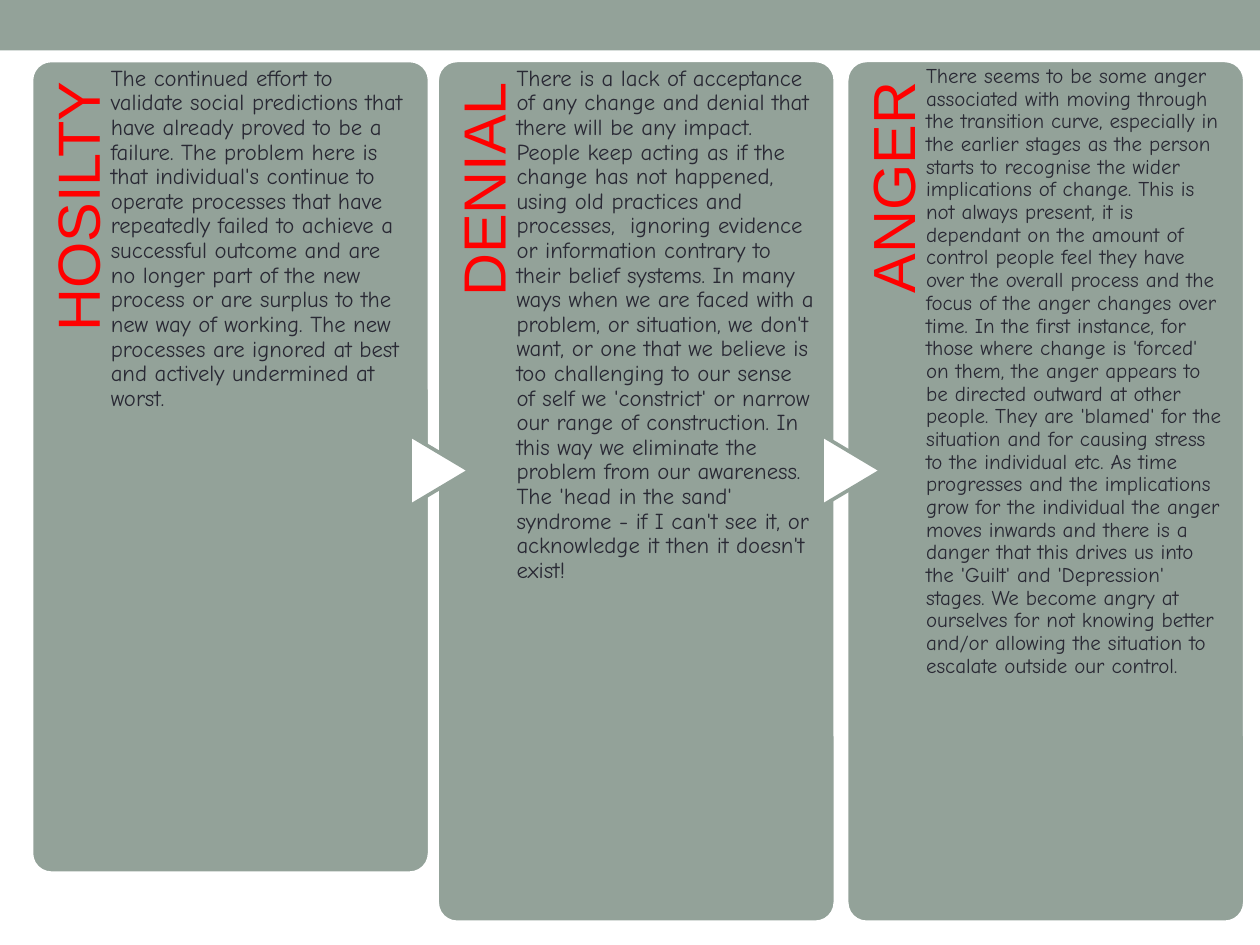
from dataclasses import dataclass

from pptx import Presentation
from pptx.dml.color import RGBColor as RGB
from pptx.enum.shapes import MSO_SHAPE as Kind
from pptx.enum.text import MSO_ANCHOR as Anchor, PP_ALIGN as Align
from pptx.util import Inches, Pt


@dataclass(frozen=True)
class Theme:
    sage: RGB = RGB(0x93, 0xA2, 0x99)
    white: RGB = RGB(0xFF, 0xFF, 0xFF)
    red: RGB = RGB(0xFF, 0x00, 0x00)
    ink: RGB = RGB(0x29, 0x29, 0x34)
    head: str = "Arial"
    body: str = "Comic Neue"
    big: float = 34
    mid: float = 13
    small: float = 12
    edge: float = 2.08


class Deck:
    def __init__(self, slide, theme):
        self.slide = slide
        self.theme = theme

    def shape(self, kind, x, y, w, h, fill, line=None):
        item = self.slide.shapes.add_shape(
            kind, Inches(x), Inches(y), Inches(w), Inches(h))
        item.shadow.inherit = False
        item.fill.solid()
        item.fill.fore_color.rgb = fill
        if line is None:
            item.line.fill.background()
        else:
            item.line.color.rgb = line
            item.line.width = Pt(self.theme.edge)
        return item

    def text(self, words, x, y, w, h, font, size, color, top, right=0):
        box = self.slide.shapes.add_textbox(
            Inches(x), Inches(y), Inches(w), Inches(h))
        frame = box.text_frame
        frame.word_wrap = True
        frame.vertical_anchor = Anchor.TOP
        frame.margin_left = frame.margin_bottom = 0
        frame.margin_top, frame.margin_right = Inches(top), Inches(right)
        frame.text = words
        para = frame.paragraphs[0]
        para.line_spacing = 0.9
        style = para.runs[0].font
        style.name, style.size = font, Pt(size)
        style.color.rgb = color
        return box

    def card(self, x, y, w, h):
        item = self.shape(Kind.ROUNDED_RECTANGLE, x, y, w, h,
                          self.theme.sage, self.theme.white)
        item.adjustments[0] = 0.05

    def title(self, words, x, y, h):
        # Rotated about its centre, so its length runs up the card
        span, deep = 0.82 * h, 0.63
        box = self.text(words, x + 0.32 - span / 2, y + (span - deep) / 2,
                        span, deep, self.theme.head, self.theme.big,
                        self.theme.red, 0.13, 0.17)
        box.rotation = 270
        box.text_frame.paragraphs[0].alignment = Align.RIGHT

    def arrow(self, x):
        item = self.shape(Kind.FLOWCHART_EXTRACT, x, 3.5, 0.56, 0.47,
                          self.theme.white, self.theme.sage)
        item.rotation = 90

    def body(self, words, x, y, h, size, top):
        self.text(words, x, y, 2.36, h, self.theme.body, size,
                  self.theme.ink, top)


# Title, left, height, arrow left, text size, text top inset, sentences
STAGES = [
    ("HOSILTY", 0.25, 6.45, None, Theme.mid, 0.05, [
        "The continued effort to validate social predictions that have "
        "already proved to be a failure.",
        "The problem here is that individual's continue to operate processes "
        "that have repeatedly failed to achieve a successful outcome and are "
        "no longer part of the new process or are surplus to the new way of "
        "working.",
        "The new processes are ignored at best and actively undermined at "
        "worst."]),
    ("DENIAL", 3.47, 6.84, 3.21, Theme.mid, 0.05, [
        "There is a lack of acceptance of any change and denial that there "
        "will be any impact.",
        "People keep acting as if the change has not happened, using old "
        "practices and processes,  ignoring evidence or information contrary "
        "to their belief systems.",
        "In many ways when we are faced with a problem, or situation, we "
        "don't want, or one that we believe is too challenging to our sense "
        "of self we 'constrict' or narrow our range of construction.",
        "In this way we eliminate the problem from our awareness.",
        "The 'head in the sand' syndrome - if I can't see it, or acknowledge "
        "it then it doesn't exist!"]),
    ("ANGER", 6.72, 6.84, 6.48, Theme.small, 0.04, [
        "There seems to be some anger associated with moving through the "
        "transition curve, especially in the earlier stages as the person "
        "starts to recognise the wider implications of change.",
        "This is not always present, it is dependant on the amount of control "
        "people feel they have over the overall process and the focus of the "
        "anger changes over time.",
        "In the first instance, for those where change is 'forced' on them, "
        "the anger appears to be directed outward at other people.",
        "They are 'blamed' for the situation and for causing stress to the "
        "individual etc.",
        "As time progresses and the implications grow for the individual the "
        "anger moves inwards and there is a danger that this drives us into "
        "the 'Guilt' and 'Depression' stages.",
        "We become angry at ourselves for not knowing better and/or allowing "
        "the situation to escalate outside our control."]),
]


def main():
    show = Presentation()
    show.slide_width, show.slide_height = Inches(10), Inches(7.5)
    deck = Deck(show.slides.add_slide(show.slide_layouts[6]), Theme())

    # Top band
    deck.shape(Kind.RECTANGLE, 0, 0, 10, 0.4, deck.theme.sage)

    # One card per stage, with an arrow from the stage before
    y = 0.48
    for name, x, h, tip, size, top, lines in STAGES:
        deck.card(x, y, 3.16, h)
        deck.title(name, x, y, h)
        if tip is not None:
            deck.arrow(tip)
        deck.body(" ".join(lines), x + 0.63, y, h, size, top)

    show.save("out.pptx")


if __name__ == "__main__":
    main()
